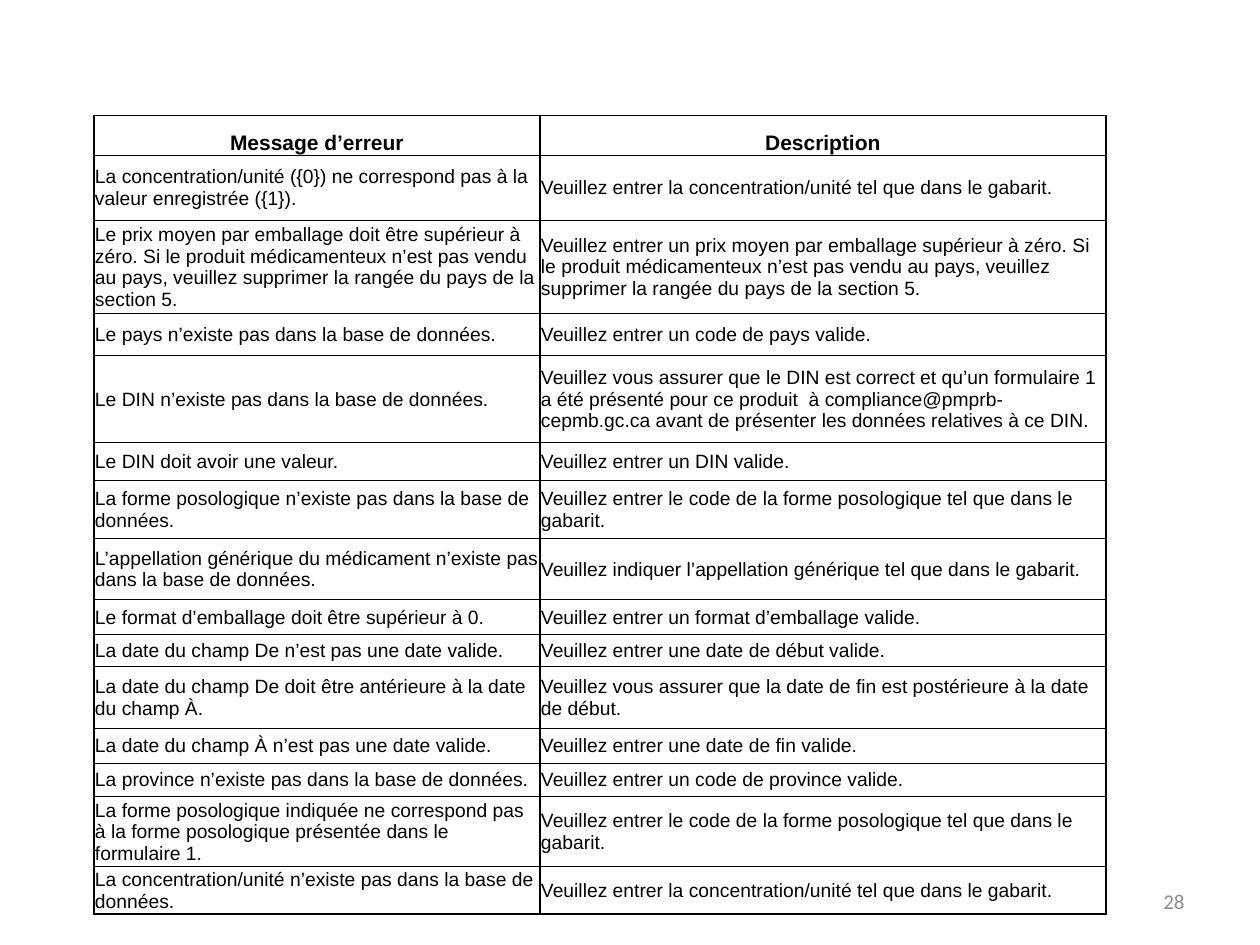
"""Build a slide with a table of error messages and their descriptions."""
from lxml import etree
from pptx import Presentation
from pptx.dml.color import RGBColor
from pptx.enum.text import MSO_ANCHOR, PP_ALIGN
from pptx.oxml.ns import qn
from pptx.util import Pt

LEFT, CENTER, RIGHT = PP_ALIGN.LEFT, PP_ALIGN.CENTER, PP_ALIGN.RIGHT
MIDDLE, BOTTOM = MSO_ANCHOR.MIDDLE, MSO_ANCHOR.BOTTOM
BLACK = RGBColor(0x00, 0x00, 0x00)
GREY = RGBColor(0x8C, 0x8C, 0x8C)
EMU_PER_PX = 914400 / 126

HEADER = ("Message d’erreur", "Description")
HEADER_HEIGHT = 40
ROWS = [
    (65, "La concentration/unité ({0}) ne correspond pas à la valeur enregistrée ({1}).",
     "Veuillez entrer la concentration/unité tel que dans le gabarit."),
    (91, "Le prix moyen par emballage doit être supérieur à zéro. Si le produit médicamenteux "
     "n’est pas vendu au pays, veuillez supprimer la rangée du pays de la section 5.",
     "Veuillez entrer un prix moyen par emballage supérieur à zéro. Si le produit médicamenteux "
     "n’est pas vendu au pays, veuillez supprimer la rangée du pays de la section 5."),
    (42, "Le pays n’existe pas dans la base de données.",
     "Veuillez entrer un code de pays valide."),
    (87, "Le DIN n’existe pas dans la base de données.",
     "Veuillez vous assurer que le DIN est correct et qu’un formulaire 1 a été présenté pour "
     "ce produit  à compliance@pmprb-cepmb.gc.ca avant de présenter les données relatives à ce DIN."),
    (38, "Le DIN doit avoir une valeur.",
     "Veuillez entrer un DIN valide."),
    (58, "La forme posologique n’existe pas dans la base de données.",
     "Veuillez entrer le code de la forme posologique tel que dans le gabarit."),
    (61, "L’appellation générique du médicament n’existe pas dans la base de données.",
     "Veuillez indiquer l’appellation générique tel que dans le gabarit."),
    (35, "Le format d’emballage doit être supérieur à 0.",
     "Veuillez entrer un format d’emballage valide."),
    (32, "La date du champ De n’est pas une date valide.",
     "Veuillez entrer une date de début valide."),
    (62, "La date du champ De doit être antérieure à la date du champ À.",
     "Veuillez vous assurer que la date de fin est postérieure à la date de début."),
    (35, "La date du champ À n’est pas une date valide.",
     "Veuillez entrer une date de fin valide."),
    (33, "La province n’existe pas dans la base de données.",
     "Veuillez entrer un code de province valide."),
    (66, "La forme posologique indiquée ne correspond pas à la forme posologique présentée "
     "dans le formulaire 1.",
     "Veuillez entrer le code de la forme posologique tel que dans le gabarit."),
    (44, "La concentration/unité n’existe pas dans la base de données.",
     "Veuillez entrer la concentration/unité tel que dans le gabarit."),
]
TABLE_LEFT, TABLE_TOP = 94, 115
COLUMN_WIDTHS = (446, 566)
PAGE_NUMBER = "28"
PAGE_NUMBER_BOX = (903, 876, 294, 50)


def px(n):
    return round(n * EMU_PER_PX)


def write(tf, text, size=11, font="Arial", color=BLACK, bold=False, align=LEFT):
    p = tf.paragraphs[0]
    p.alignment = align
    r = p.add_run()
    r.text = text
    r.font.size = Pt(size)
    r.font.name = font
    r.font.bold = bold
    r.font.color.rgb = color


def set_borders(cell, **widths):
    tc_pr = cell._tc.get_or_add_tcPr()
    for side, width in widths.items():
        ln = etree.SubElement(tc_pr, qn(f"a:ln{side}"), w=str(Pt(width)))
        fill = etree.SubElement(ln, qn("a:solidFill"))
        etree.SubElement(fill, qn("a:srgbClr"), val=str(BLACK))


def format_cell(cell, text, anchor=MIDDLE, bottom=0.5, **text_format):
    cell.margin_left = cell.margin_right = cell.margin_top = px(1)
    cell.margin_bottom = 0
    cell.vertical_anchor = anchor
    set_borders(cell, L=1, R=1, T=0.5, B=bottom)
    cell.fill.background()
    write(cell.text_frame, text, **text_format)


def add_error_table(s):
    heights = [HEADER_HEIGHT] + [height for height, *_ in ROWS]
    frame = s.shapes.add_table(
        len(heights), len(COLUMN_WIDTHS), px(TABLE_LEFT), px(TABLE_TOP),
        px(sum(COLUMN_WIDTHS)), px(sum(heights)))
    table = frame.table
    table.first_row = table.horz_banding = False
    for column, width in zip(table.columns, COLUMN_WIDTHS):
        column.width = px(width)
    for row, height in zip(table.rows, heights):
        row.height = px(height)
    for c, text in enumerate(HEADER):
        format_cell(table.cell(0, c), text, anchor=BOTTOM, size=12, bold=True, align=CENTER)
    for i, (_, *texts) in enumerate(ROWS, 1):
        for c, text in enumerate(texts):
            format_cell(table.cell(i, c), text, bottom=1 if i == len(ROWS) else 0.5)


def add_page_number(s):
    tf = s.shapes.add_textbox(*map(px, PAGE_NUMBER_BOX)).text_frame
    tf.word_wrap = True
    tf.vertical_anchor = MIDDLE
    write(tf, PAGE_NUMBER, size=12, font="Calibri", color=GREY, align=RIGHT)


def main():
    prs = Presentation()
    prs.slide_width, prs.slide_height = px(1260), px(945)
    s = prs.slides.add_slide(prs.slide_layouts[6])
    add_page_number(s)
    add_error_table(s)
    prs.save("out.pptx")


if __name__ == "__main__":
    main()
